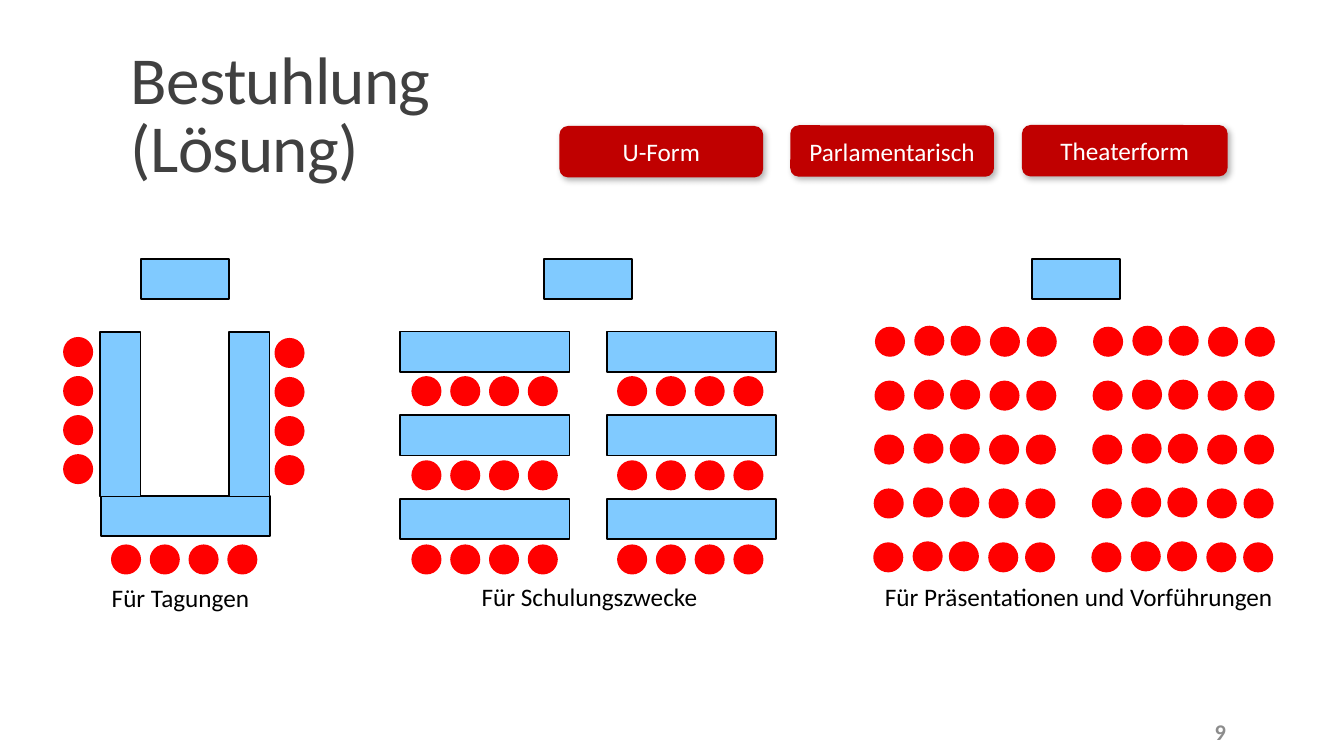
from lxml import etree
from pptx import Presentation
from pptx.dml.color import RGBColor
from pptx.enum.shapes import MSO_SHAPE
from pptx.enum.text import MSO_ANCHOR, PP_ALIGN
from pptx.oxml import parse_xml
from pptx.util import Pt

RECT, OVAL = MSO_SHAPE.RECTANGLE, MSO_SHAPE.OVAL
BUTTON = MSO_SHAPE.FLOWCHART_ALTERNATE_PROCESS
LEFT, CENTER, RIGHT = PP_ALIGN.LEFT, PP_ALIGN.CENTER, PP_ALIGN.RIGHT
TOP, MIDDLE, BOTTOM = MSO_ANCHOR.TOP, MSO_ANCHOR.MIDDLE, MSO_ANCHOR.BOTTOM

COLORS = {
    "title": "404040", "number": "8C8C8C", "caption": "000000",
    "table": "80CAFF", "table_line": "000000", "seat": "FF0000",
    "button": "C00000", "button_text": "FFFFFF",
}
SEAT = 20.2
DRAWING_NS = "http://schemas.openxmlformats.org/drawingml/2006/main"
BUTTON_SHADOW = f"""<a:effectLst xmlns:a="{DRAWING_NS}">
  <a:outerShdw blurRad="57150" dist="33020" dir="3180000" algn="ctr" rotWithShape="0">
    <a:srgbClr val="000000"><a:alpha val="30000"/></a:srgbClr>
  </a:outerShdw></a:effectLst>"""

prs = Presentation()
prs.slide_width, prs.slide_height = Pt(960), Pt(540)
slide = prs.slides.add_slide(prs.slide_layouts[6])


def add_figure(kind, x, y, w, h, fill, line=None):
    figure = slide.shapes.add_shape(kind, Pt(x), Pt(y), Pt(w), Pt(h))
    figure.shadow.inherit = False
    figure.fill.solid()
    figure.fill.fore_color.rgb = RGBColor.from_string(COLORS[fill])
    if line:
        figure.line.color.rgb = RGBColor.from_string(COLORS[line])
        figure.line.width = Pt(1.25)
    else:
        figure.line.fill.background()
    return figure


def write(shape, text, size, color, align=LEFT, anchor=TOP, wrap=True):
    """Put one formatted paragraph into the shape and return it."""
    frame = shape.text_frame
    frame.word_wrap = wrap
    frame.vertical_anchor = anchor
    paragraph = frame.paragraphs[0]
    for i, part in enumerate(text.splitlines()):
        if i:
            paragraph.add_line_break()
        paragraph.add_run().text = part
    paragraph.alignment = align
    paragraph.font.name = "Calibri"
    paragraph.font.size = Pt(size)
    paragraph.font.color.rgb = RGBColor.from_string(COLORS[color])
    return paragraph


# Title and slide number
title_box = slide.shapes.add_textbox(Pt(86.4), Pt(22.3), Pt(792), Pt(114.5))
title = write(title_box, "Bestuhlung\n(Lösung)", 48, "title", anchor=BOTTOM)
title.line_spacing = 0.85
for run in title.runs:
    run.font._rPr.set("spc", "-50")
number_box = slide.shapes.add_textbox(Pt(779.8), Pt(508.3), Pt(103), Pt(28.8))
write(number_box, "9", 16, "number", RIGHT, MIDDLE).font.bold = True

# Tables: speaker desks, U-shape, classroom rows
tables = [(x, 185, 62.8, 28.8) for x in (100.8, 388.8, 737.3)]
tables += [(72, 354.3, 121, 28.8)]
tables += [(x, 237.2, 28.8, 117.4) for x in (71.7, 163.8)]
tables += [(x, 236.9 + 59.8 * row, 121, 28.8)
           for x in (285.8, 433.4) for row in range(3)]
for table in tables:
    add_figure(RECT, *table, "table", "table_line")

# Seats around the U, behind the classroom tables and in theatre blocks
seats = [(x, y + 27.9 * i) for x, y in ((45.7, 241.3), (196.7, 242)) for i in range(4)]
seats += [(79.9 + 27.7 * i, 389.5) for i in range(4)]
seats += [(x + 27.7 * i, 269.3 + 60.1 * row)
          for x in (294.5, 441.4) for row in range(3) for i in range(4)]
theatre_columns = [(0, 0), (28.1, -0.7), (54, -0.7), (82.1, 0), (108.4, 0)]
seats += [(x + dx - 0.3 * row, 234 + dy + 38.5 * row)
          for x in (625.6, 781.4) for row in range(5) for dx, dy in theatre_columns]
for x, y in seats:
    add_figure(OVAL, x, y, SEAT, SEAT, "seat", "seat")

# Captions
for text, x, y, w, wrap in (
    ("Für Tagungen", 72.7, 412.6, 113.8, False),
    ("Für Schulungszwecke", 337, 411.8, 170.6, False),
    ("Für Präsentationen und Vorführungen", 625, 411.8, 294.5, True),
):
    caption_box = slide.shapes.add_textbox(Pt(x), Pt(y), Pt(w), Pt(28.8))
    write(caption_box, text, 18, "caption", wrap=wrap)

# Buttons naming the seating forms
for text, x, y, w in (
    ("U-Form", 399.6, 90, 145.5),
    ("Parlamentarisch", 564.5, 89.5, 145.5),
    ("Theaterform", 730, 89.3, 146.9),
):
    button = add_figure(BUTTON, x, y, w, 36.7, "button")
    properties = button._element.spPr
    properties.remove(properties.find(etree.QName(DRAWING_NS, "effectLst").text))
    properties.append(parse_xml(BUTTON_SHADOW))
    write(button, text, 18, "button_text", CENTER, MIDDLE)

prs.save("out.pptx")
